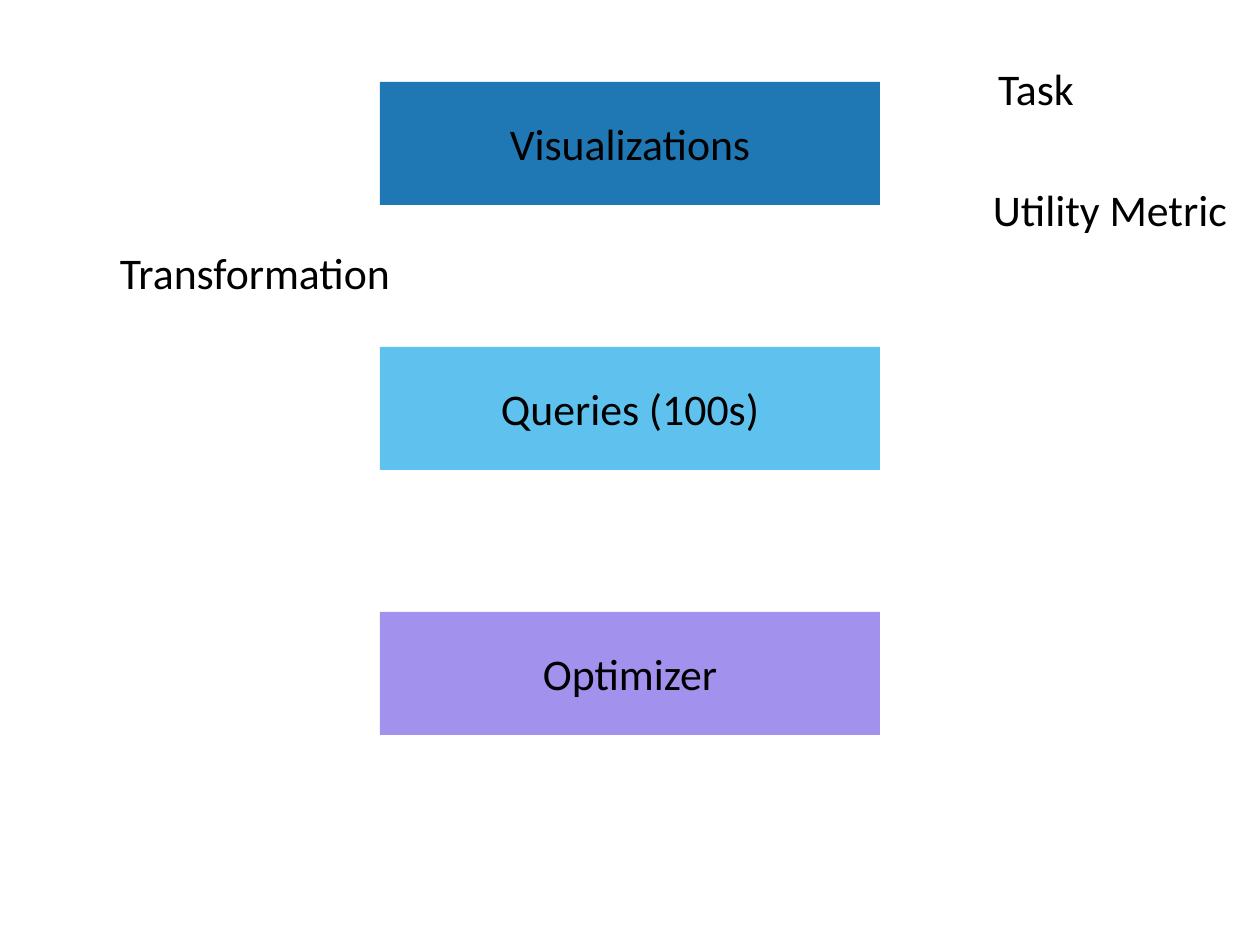
from dataclasses import dataclass

from pptx import Presentation
from pptx.dml.color import RGBColor
from pptx.enum.shapes import MSO_SHAPE
from pptx.enum.text import MSO_ANCHOR, MSO_AUTO_SIZE, PP_ALIGN
from pptx.slide import Slide
from pptx.text.text import TextFrame
from pptx.util import Pt

RECTANGLE = MSO_SHAPE.RECTANGLE
MIDDLE = MSO_ANCHOR.MIDDLE
FIT_TEXT = MSO_AUTO_SIZE.SHAPE_TO_FIT_TEXT
LEFT, CENTER = PP_ALIGN.LEFT, PP_ALIGN.CENTER

EMU_PER_PX = 914400 / 126
FONT, FONT_SIZE = "Calibri", Pt(25)
COLORS = {
    "text": "000000",
    "visualizations": "1F78B4",
    "queries": "5FC2EE",
    "optimizer": "A391EE",
}

STAGE_LEFT, STAGE_TOP = 380, 82
STAGE_WIDTH, STAGE_HEIGHT = 500, 123
STAGE_PITCH = 265
LABEL_HEIGHT, LABEL_INSET = 63, 5


@dataclass
class Stage:
    text: str
    color: str


@dataclass
class Label:
    text: str
    left: int
    top: int
    width: int


STAGES = [
    Stage("Visualizations", "visualizations"),
    Stage("Queries (100s)", "queries"),
    Stage("Optimizer", "optimizer"),
]
LABELS = [
    Label("Task", 993, 57, 92),
    Label("Utility Metric", 988, 178, 255),
    Label("Transformation", 115, 241, 304),
]


def px(length: int) -> int:
    return round(length * EMU_PER_PX)


def rgb(name: str) -> RGBColor:
    return RGBColor.from_string(COLORS[name])


def write_text(frame: TextFrame, text: str, alignment: PP_ALIGN, inset: int) -> None:
    frame.vertical_anchor = MIDDLE
    frame.margin_left = frame.margin_right = px(inset)
    frame.margin_top = frame.margin_bottom = px(inset)
    paragraph = frame.paragraphs[0]
    paragraph.text = text
    paragraph.alignment = alignment
    paragraph.font.name = FONT
    paragraph.font.size = FONT_SIZE
    paragraph.font.color.rgb = rgb("text")


def draw_stage(slide: Slide, stage: Stage, row: int) -> None:
    shape = slide.shapes.add_shape(
        RECTANGLE, px(STAGE_LEFT), px(STAGE_TOP + row * STAGE_PITCH),
        px(STAGE_WIDTH), px(STAGE_HEIGHT))
    shape.shadow.inherit = False
    shape.fill.solid()
    shape.fill.fore_color.rgb = rgb(stage.color)
    shape.line.fill.background()
    write_text(shape.text_frame, stage.text, CENTER, 0)


def draw_label(slide: Slide, label: Label) -> None:
    box = slide.shapes.add_textbox(
        px(label.left), px(label.top), px(label.width), px(LABEL_HEIGHT))
    frame = box.text_frame
    frame.word_wrap = False
    frame.auto_size = FIT_TEXT
    write_text(frame, label.text, LEFT, LABEL_INSET)


def main() -> None:
    presentation = Presentation()
    presentation.slide_width, presentation.slide_height = px(1260), px(945)
    slide = presentation.slides.add_slide(presentation.slide_layouts[6])
    for row, stage in enumerate(STAGES):
        draw_stage(slide, stage, row)
    for label in LABELS:
        draw_label(slide, label)
    presentation.save("out.pptx")


if __name__ == "__main__":
    main()
